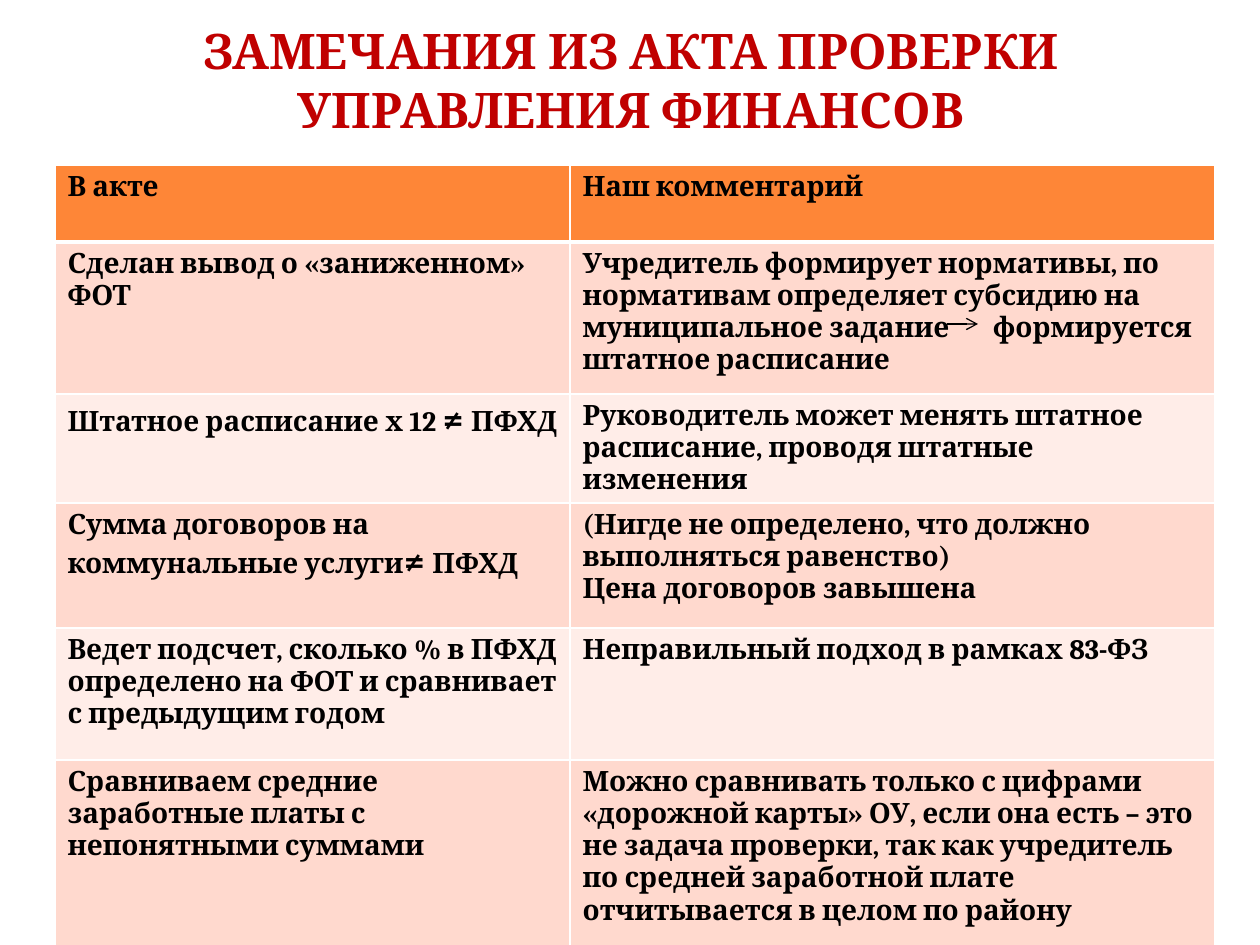
from lxml.etree import SubElement
from pptx import Presentation
from pptx.dml.color import RGBColor
from pptx.enum.shapes import MSO_CONNECTOR
from pptx.enum.text import MSO_ANCHOR, PP_ALIGN
from pptx.oxml.ns import qn
from pptx.util import Emu, Pt

WHITE = RGBColor(0xFF, 0xFF, 0xFF)
BLACK = RGBColor(0x00, 0x00, 0x00)
RED = RGBColor(0xC0, 0x00, 0x00)
ORANGE = RGBColor(0xFE, 0x86, 0x37)
PEACH = RGBColor(0xFF, 0xD9, 0xCE)
PALE_PEACH = RGBColor(0xFF, 0xED, 0xE8)

FONT = "Cambria"
TITLE = "ЗАМЕЧАНИЯ ИЗ АКТА ПРОВЕРКИ УПРАВЛЕНИЯ ФИНАНСОВ"
COLUMN_WIDTHS = [515, 645]
ROW_HEIGHTS = [77, 152, 94, 125, 132, 188]
ARROW_GAP_TAB = 410
ROWS = [
    ("В акте", "Наш комментарий"),
    ("Сделан вывод о «заниженном» ФОТ",
     "Учредитель формирует нормативы, по нормативам определяет субсидию на "
     "муниципальное задание\tформируется штатное расписание"),
    ("Штатное расписание х 12 ≠ ПФХД",
     "Руководитель может менять штатное расписание, проводя штатные изменения"),
    ("Сумма договоров на коммунальные услуги≠ ПФХД",
     "(Нигде не определено, что должно выполняться равенство)\n"
     "Цена договоров завышена"),
    ("Ведет подсчет, сколько % в ПФХД определено на ФОТ и сравнивает "
     "с предыдущим годом",
     "Неправильный подход в рамках 83-ФЗ"),
    ("Сравниваем средние заработные платы с непонятными суммами",
     "Можно сравнивать только с цифрами «дорожной карты» ОУ, если она есть – это "
     "не задача проверки, так как учредитель по средней заработной плате "
     "отчитывается в целом по району"),
]


def px(value):
    return Emu(round(value * 914400 / 126))


def add_solid_fill(parent, color):
    fill = SubElement(parent, qn("a:solidFill"))
    SubElement(fill, qn("a:srgbClr"), val=str(color))


def write(frame, text, size=16, color=BLACK, align=PP_ALIGN.LEFT, outline=None):
    """Fill a frame, one paragraph a line, with the ≠ sign set larger."""
    for index, line in enumerate(text.split("\n")):
        para = frame.paragraphs[0] if index == 0 else frame.add_paragraph()
        para.alignment = align
        if "\t" in line:
            tabs = SubElement(para._p.get_or_add_pPr(), qn("a:tabLst"))
            SubElement(tabs, qn("a:tab"), pos=str(px(ARROW_GAP_TAB)), algn="l")
        for part in filter(None, line.partition("≠ ")):
            span = para.add_run()
            span.text = part
            if outline:
                edge = SubElement(span._r.get_or_add_rPr(), qn("a:ln"), w=str(Pt(outline)))
                add_solid_fill(edge, color)
            span.font.name = FONT
            span.font.size = Pt(20 if part == "≠ " else size)
            span.font.bold = True
            span.font.color.rgb = color


def add_title(page):
    box = page.shapes.add_textbox(px(64), px(0), px(1134), px(158))
    box.text_frame.word_wrap = True
    box.text_frame.vertical_anchor = MSO_ANCHOR.MIDDLE
    write(box.text_frame, TITLE, size=28, color=RED, align=PP_ALIGN.CENTER, outline=0.71)


def style_cell(cell, row):
    props = cell._tc.get_or_add_tcPr()
    for side in ("L", "R", "T", "B"):
        heavy = (row, side) in ((0, "B"), (1, "T"))
        border = SubElement(props, qn(f"a:ln{side}"), w=str(Pt(3 if heavy else 1)))
        add_solid_fill(border, WHITE)
    cell.fill.solid()
    stripe = PEACH if row % 2 else PALE_PEACH
    cell.fill.fore_color.rgb = stripe if row else ORANGE


def add_remarks_table(page):
    table = page.shapes.add_table(
        len(ROWS), len(COLUMN_WIDTHS), px(55), px(165),
        px(sum(COLUMN_WIDTHS)), px(sum(ROW_HEIGHTS))).table
    for column, width in zip(table.columns, COLUMN_WIDTHS):
        column.width = px(width)
    for row, (texts, height) in enumerate(zip(ROWS, ROW_HEIGHTS)):
        table.rows[row].height = px(height)
        for column, text in enumerate(texts):
            cell = table.cell(row, column)
            style_cell(cell, row)
            write(cell.text_frame, text)


def add_arrow(page, left, right, y):
    arrow = page.shapes.add_connector(
        MSO_CONNECTOR.STRAIGHT, px(left), px(y), px(right), px(y))
    arrow.line.color.rgb = BLACK
    arrow.line.width = Pt(0.75)
    SubElement(arrow.line._get_or_add_ln(), qn("a:tailEnd"), type="arrow")
    SubElement(arrow._element.spPr, qn("a:effectLst"))


def main():
    deck = Presentation()
    deck.slide_width, deck.slide_height = px(1260), px(945)
    page = deck.slides.add_slide(deck.slide_layouts[6])
    add_remarks_table(page)
    add_title(page)
    add_arrow(page, 947, 978, 324)
    deck.save("out.pptx")


if __name__ == "__main__":
    main()
